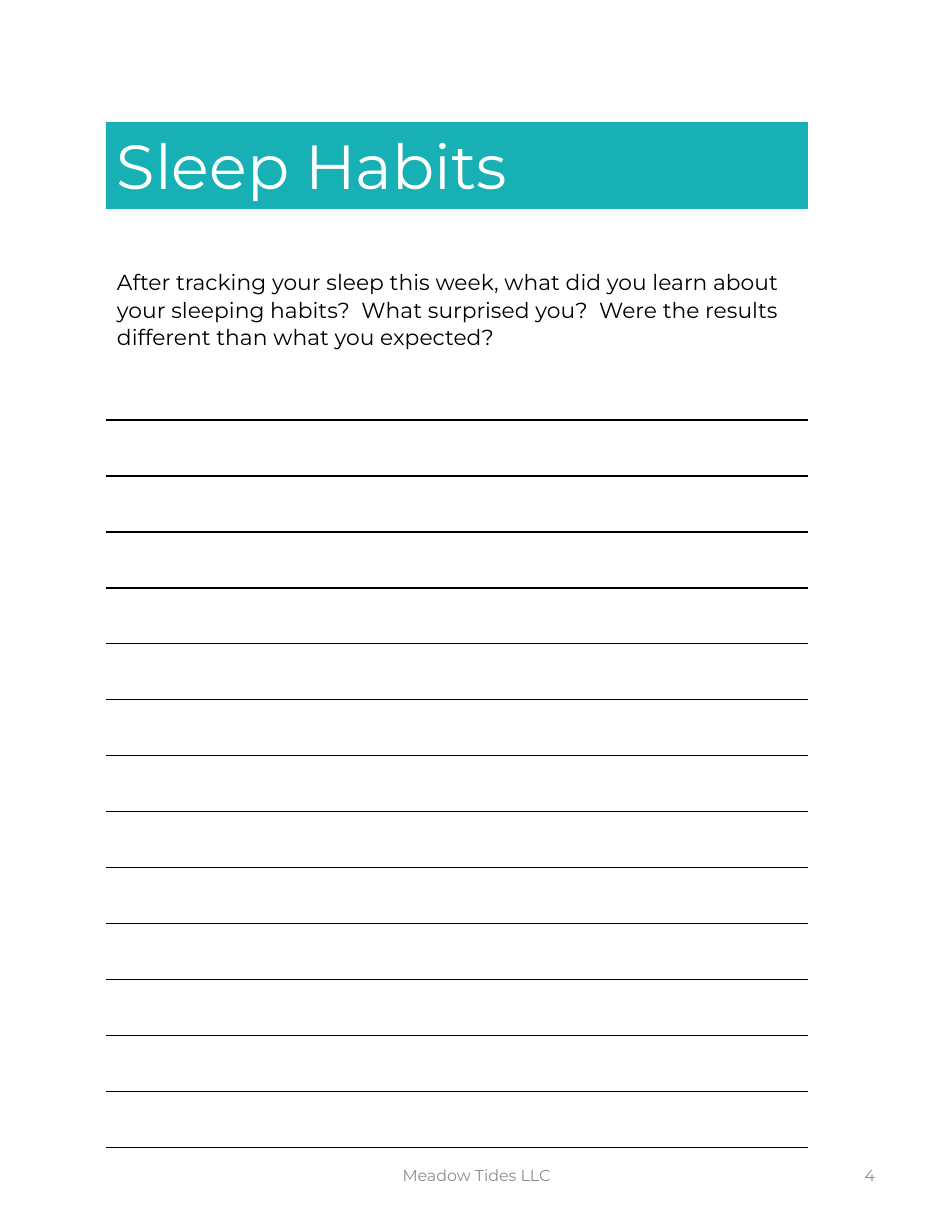
from lxml.etree import SubElement as Sub
from pptx import Presentation
from pptx.dml.color import RGBColor as Rgb
from pptx.enum.shapes import MSO_SHAPE as Shape
from pptx.enum.text import MSO_ANCHOR as Anchor, PP_ALIGN as Align
from pptx.oxml.ns import qn
from pptx.util import Pt

PX = 914400 // 112
COLORS = {"teal": "16B0B5", "white": "FFFFFF", "black": "000000", "gray": "8C8C8C"}
FONT = "Montserrat"
LEFT, WIDTH = 106, 702
ROWS, PITCH = 14, 56
PROMPT = (
    "After tracking your sleep this week, what did you learn about "
    "your sleeping habits?  What surprised you?  Were the results "
    "different than what you expected?"
)


def scale(*box):
    return [n * PX for n in box]


def color(name):
    return Rgb.from_string(COLORS[name])


def write(shape, text, size, tone, anchor=Anchor.TOP, **form):
    """Put one styled paragraph in a shape; form holds paragraph values."""
    frame = shape.text_frame
    frame.word_wrap = True
    frame.vertical_anchor = anchor
    par = frame.paragraphs[0]
    for key, value in form.items():
        setattr(par, key, value)
    run = par.add_run()
    run.text = text
    for key, value in {"name": FONT, "size": Pt(size)}.items():
        setattr(run.font, key, value)
    run.font.color.rgb = color(tone)


def add_text(slide, box, text, size, tone, **form):
    write(slide.shapes.add_textbox(*scale(*box)), text, size, tone, **form)


def add_title(slide, box, text):
    bar = slide.shapes.add_shape(Shape.RECTANGLE, *scale(*box))
    bar.shadow.inherit = False
    bar.fill.solid()
    bar.fill.fore_color.rgb = color("teal")
    bar.line.fill.background()
    write(bar, text, 40, "white", alignment=Align.LEFT)


def add_edge(cell, side, tone=None):
    """Draw one cell border, or hide it when no tone is given."""
    line = Sub(cell._tc.get_or_add_tcPr(), qn(f"a:ln{side}"), w=str(Pt(1)))
    if tone:
        fill = Sub(line, qn("a:solidFill"))
        Sub(fill, qn("a:srgbClr"), val=COLORS[tone])
    else:
        Sub(line, qn("a:noFill"))


def add_lines(slide, top):
    """Add the writing lines as a table ruled below each row."""
    box = scale(LEFT, top, WIDTH, ROWS * PITCH)
    table = slide.shapes.add_table(ROWS, 1, *box).table
    for key in ("first_row", "horz_banding"):
        setattr(table, key, False)
    for i, row in enumerate(table.rows):
        row.height = PITCH * PX
        cell = row.cells[0]
        edges = {"L": None, "R": None, "T": "black" if i else None, "B": "black"}
        for side, tone in edges.items():
            add_edge(cell, side, tone)
        cell.fill.background()


def add_foot(slide, left, width, text, align):
    add_text(slide, (left, 1142, width, 66), text, 10.2, "gray",
             anchor=Anchor.MIDDLE, alignment=align)


def main():
    deck = Presentation()
    deck.slide_width, deck.slide_height = scale(952, 1232)
    slide = deck.slides.add_slide(deck.slide_layouts[6])
    add_foot(slide, 316, 321, "Meadow Tides LLC", Align.CENTER)
    add_foot(slide, 672, 214, "4", Align.RIGHT)
    add_title(slide, (LEFT, 122, WIDTH, 87), "Sleep Habits")
    add_text(slide, (LEFT, 261, WIDTH, 95), PROMPT, 14, "black",
             line_spacing=1.07, space_after=Pt(8))
    add_lines(slide, 364)
    deck.save("out.pptx")


if __name__ == "__main__":
    main()
